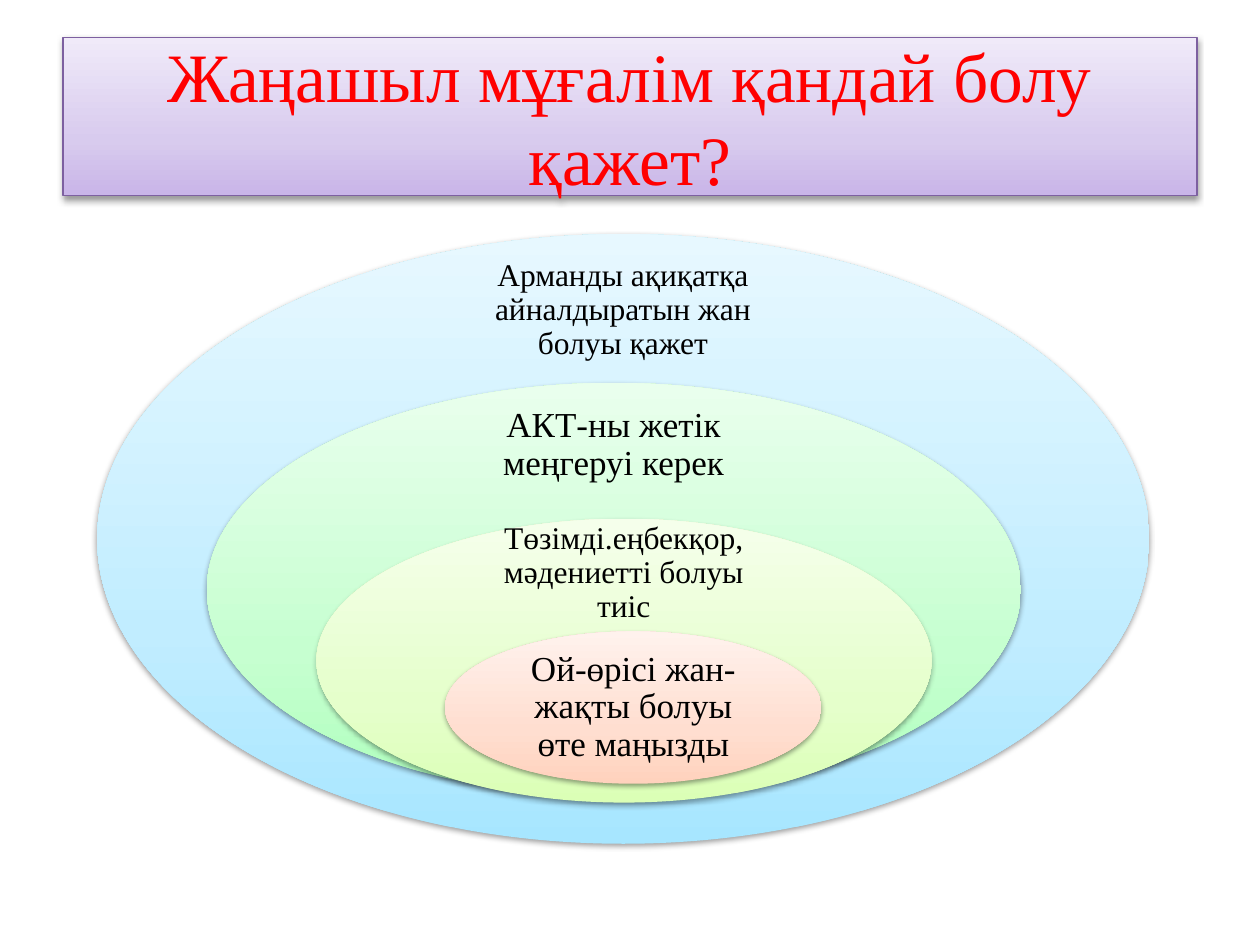
from lxml import etree
from pptx import Presentation
from pptx import util as u
from pptx.dml import color
from pptx.enum import shapes, text
from pptx.oxml import ns

FONT = "Times New Roman"
STOP_POSITIONS = (0, 35, 100)


def rgb(value):
    return color.RGBColor.from_string(value)


def add_color(parent, value):
    return etree.SubElement(parent, ns.qn("a:srgbClr"), val=value)


def place(shape, left, top, width, height):
    shape.left, shape.top = u.Cm(left), u.Cm(top)
    shape.width, shape.height = u.Cm(width), u.Cm(height)


def fill_upward(shape, colors):
    shape.fill.gradient()
    shape.fill.gradient_angle = 90
    stops = shape._element.spPr.find(".//" + ns.qn("a:gsLst"))
    for stop in list(stops):
        stops.remove(stop)
    for position, value in zip(STOP_POSITIONS, colors):
        stop = etree.SubElement(stops, ns.qn("a:gs"), pos=str(position * 1000))
        add_color(stop, value)


def add_shadow(shape):
    shape.shadow.inherit = False
    effects = shape._element.spPr.find(ns.qn("a:effectLst"))
    shadow = etree.SubElement(
        effects, ns.qn("a:outerShdw"), blurRad=str(u.Pt(3.1)),
        dist=str(u.Pt(1.6)), dir="5400000", rotWithShape="0")
    etree.SubElement(add_color(shadow, "000000"), ns.qn("a:alpha"), val="38000")


def write_text(shape, words, size, font_color):
    frame = shape.text_frame
    frame.word_wrap = True
    frame.auto_size = text.MSO_AUTO_SIZE.NONE
    frame.vertical_anchor = text.MSO_ANCHOR.MIDDLE
    paragraph = frame.paragraphs[0]
    paragraph.text = words
    paragraph.alignment = text.PP_ALIGN.CENTER
    paragraph.font.name = FONT
    paragraph.font.size = u.Pt(size)
    paragraph.font.color.rgb = rgb(font_color)
    return frame


def format_title(slide, words):
    title = slide.shapes.title
    place(title, 1.27, 0.76, 22.86, 3.18)
    fill_upward(title, ("C9B5E8", "D8CBEE", "F0EAF9"))
    title.line.color.rgb = rgb("7D60A0")
    title.line.width = u.Pt(0.75)
    add_shadow(title)
    write_text(title, words, 39.6, "FF0000")


def add_ellipse(slide, box, colors):
    ellipse = slide.shapes.add_shape(
        shapes.MSO_SHAPE.OVAL, *(u.Cm(length) for length in box))
    fill_upward(ellipse, colors)
    ellipse.line.fill.background()
    add_shadow(ellipse)


def add_label(slide, box, words, size):
    label = slide.shapes.add_textbox(*(u.Cm(length) for length in box))
    frame = write_text(label, words, size, "000000")
    frame.paragraphs[0].line_spacing = 0.9
    inset = u.Pt(size * 0.56)
    frame.margin_left = frame.margin_right = inset
    frame.margin_top = frame.margin_bottom = inset


def main():
    presentation = Presentation()
    presentation.slide_width, presentation.slide_height = u.Cm(25.4), u.Cm(19.05)
    slide = presentation.slides.add_slide(presentation.slide_layouts[5])
    format_title(slide, "Жаңашыл мұғалім қандай болу қажет?")
    rings = [
        ((1.96, 4.72, 21.21, 12.29), ("A7E6FF", "C1EDFF", "E7F8FF"),
         (9.6, 5.33, 5.92, 1.85),
         "Арманды ақиқатқа айналдыратын жан болуы қажет", 18),
        ((4.17, 7.72, 16.41, 8.33), ("AFFFBD", "C6FFD0", "E9FFED"),
         (9.5, 8.23, 5.74, 1.5), "АКТ-ны жетік меңгеруі керек", 20),
        ((6.38, 10.46, 12.4, 5.72), ("DBFFB6", "E5FFCB", "F5FFEB"),
         (9.68, 10.9, 5.79, 1.3), "Төзімді.еңбекқор, мәдениетті болуы тиіс", 18),
        ((8.97, 12.73, 7.59, 3.07), ("FFD2BD", "FFDED0", "FFF2ED"),
         (10.08, 13.49, 5.38, 1.55), "Ой-өрісі жан-жақты болуы өте маңызды", 20),
    ]
    for ellipse_box, colors, label_box, words, size in rings:
        add_ellipse(slide, ellipse_box, colors)
        add_label(slide, label_box, words, size)
    presentation.save("out.pptx")


if __name__ == "__main__":
    main()
